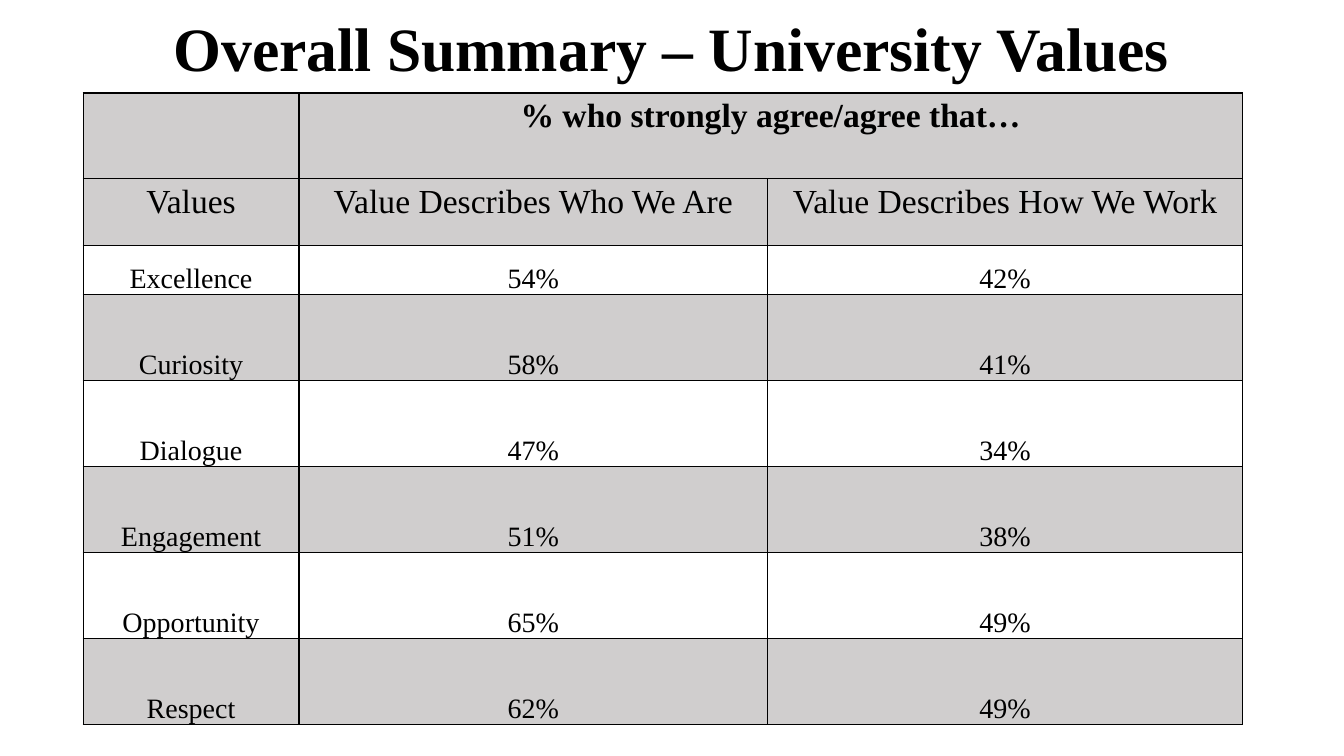
from pptx import Presentation
from pptx.dml.color import RGBColor as Rgb
from pptx.enum.text import MSO_ANCHOR as Anchor, PP_ALIGN as Align
from pptx.util import Pt
from lxml.etree import SubElement as Sub
from pptx.oxml.ns import qn

# Content
TITLE = "Overall Summary – University Values"
HEADS = [
    ("", "% who strongly agree/agree that…", ""),
    ("Values", "Value Describes Who We Are", "Value Describes How We Work"),
]
VALUES = [
    ("Excellence", "54%", "42%"),
    ("Curiosity", "58%", "41%"),
    ("Dialogue", "47%", "34%"),
    ("Engagement", "51%", "38%"),
    ("Opportunity", "65%", "49%"),
    ("Respect", "62%", "49%"),
]

# Format
COLORS = {"ink": "000000", "band": "D0CECE", "plain": "FFFFFF"}
FONT = "Times New Roman"
TALL = 61.4
COLS = [154.1, 334.8, 339.1]
ROWS = [TALL, 47.5, 35.3] + [TALL] * (len(VALUES) - 1)
HEAD = {"vertical_anchor": Anchor.TOP}
BODY = {"vertical_anchor": Anchor.BOTTOM, "margin_left": Pt(0.7),
        "margin_right": Pt(0.7), "margin_top": Pt(0.7), "margin_bottom": 0}


def apply(item, form):
    for key, val in form.items():
        setattr(item, key, val)


def write(frame, text, size, bold=False):
    para = frame.paragraphs[0]
    para.alignment = Align.CENTER
    if text:
        run = para.add_run()
        run.text = text
        apply(run.font, {"name": FONT, "size": Pt(size), "bold": bold})
        run.font.color.rgb = Rgb.from_string(COLORS["ink"])
    return para


def border(cell):
    props = cell._tc.get_or_add_tcPr()
    for side in ("lnL", "lnR", "lnT", "lnB"):
        line = Sub(props, qn("a:" + side), w=str(Pt(1)))
        fill = Sub(line, qn("a:solidFill"))
        Sub(fill, qn("a:srgbClr"), val=COLORS["ink"])


# Slide and title
deck = Presentation()
apply(deck, {"slide_width": Pt(960), "slide_height": Pt(540)})
slide = deck.slides.add_slide(deck.slide_layouts[5])
title = slide.shapes.title
apply(title, {"left": Pt(66), "top": Pt(6.5), "width": Pt(828), "height": Pt(60)})
title.text_frame.vertical_anchor = Anchor.MIDDLE
write(title.text_frame, TITLE, 44, True).line_spacing = 0.9

# Table
data = HEADS + VALUES
table = slide.shapes.add_table(len(data), len(COLS), Pt(59.4), Pt(66.4),
                               Pt(sum(COLS)), Pt(sum(ROWS))).table
apply(table, {"first_row": False, "horz_banding": False})
for col, width in zip(table.columns, COLS):
    col.width = Pt(width)
for row, height in zip(table.rows, ROWS):
    row.height = Pt(height)
table.cell(0, 1).merge(table.cell(0, 2))

# Cells
for r, texts in enumerate(data):
    head = r < len(HEADS)
    shade = "band" if head or r % 2 else "plain"
    for c, text in enumerate(texts):
        cell = table.cell(r, c)
        apply(cell, HEAD if head else BODY)
        border(cell)
        cell.fill.solid()
        cell.fill.fore_color.rgb = Rgb.from_string(COLORS[shade])
        write(cell.text_frame, text, 24 if head else 20, r == 0)

deck.save("out.pptx")
